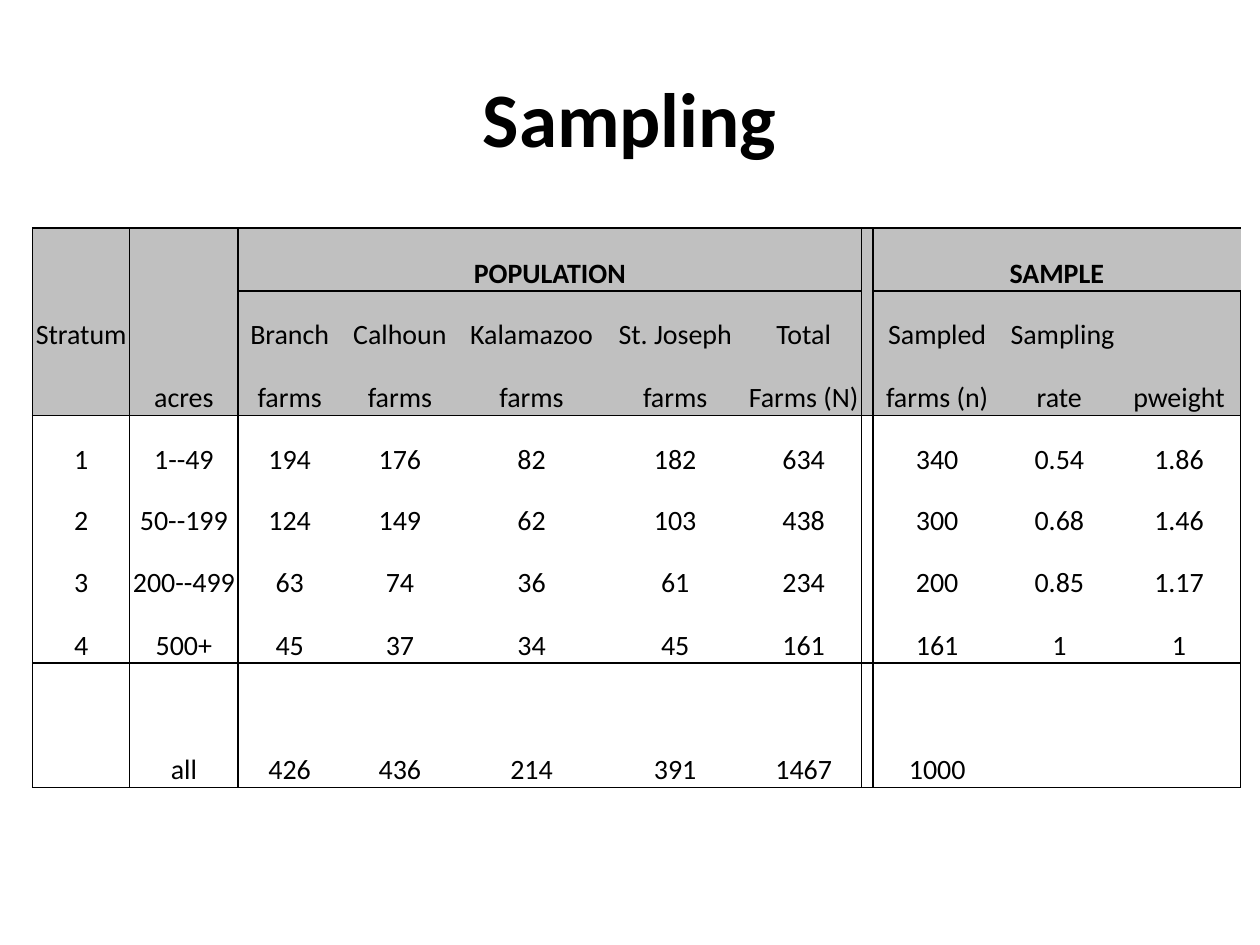
"""Build the farm sampling slide."""
from dataclasses import dataclass

import pptx
import pptx.dml.color
import pptx.enum.text
import pptx.oxml
import pptx.oxml.ns
import pptx.util

Inches = pptx.util.Inches
Pt = pptx.util.Pt
ANCHOR = pptx.enum.text.MSO_ANCHOR


@dataclass(frozen=True)
class Theme:
    """Colours, font and type sizes of the slide."""
    ink: str = "000000"
    header: str = "C0C0C0"
    body: str = "FFFFFF"
    font: str = "Calibri"
    title_size: int = 44
    table_size: int = 16
    rule_width: int = 1


THEME = Theme()

COLUMN_WIDTHS = [0.77, 0.86, 0.82, 0.93, 1.16, 1.12, 0.92, 0.09, 1.02, 0.92, 0.98]
ROW_HEIGHTS = [0.5, 0.49, 0.5, 0.49, 0.49, 0.49, 0.5, 0.49, 0.5]
HEADER_ROWS = 3
BANNERS = {2: 5, 8: 3}
COLUMN_RULES = {0, 1, 2, 7, 8, 11}
ROW_RULES = {0, 3, 7, 9}
FARMS = [
    ["", "", "POPULATION", "", "", "", "", "", "SAMPLE", "", ""],
    ["Stratum", "", "Branch", "Calhoun", "Kalamazoo", "St. Joseph", "Total", "",
     "Sampled", " Sampling", ""],
    ["", "acres", "farms", "farms", "farms", "farms", "Farms (N)", "",
     "farms (n)", "rate", "pweight"],
    ["1", "1--49", "194", "176", "82", "182", "634", "", "340", "0.54", "1.86"],
    ["2", "50--199", "124", "149", "62", "103", "438", "", "300", "0.68", "1.46"],
    ["3", "200--499", "63", "74", "36", "61", "234", "", "200", "0.85", "1.17"],
    ["4", "500+", "45", "37", "34", "45", "161", "", "161", "1", "1"],
    [""] * 11,
    ["", "all", "426", "436", "214", "391", "1467", "", "1000", "", ""],
]


def colour(value):
    """Turn a hex value into a colour."""
    return pptx.dml.color.RGBColor.from_string(value)


def write(paragraph, text, size, bold):
    """Add one centred run to a paragraph."""
    paragraph.alignment = pptx.enum.text.PP_ALIGN.CENTER
    run = paragraph.add_run()
    run.text = text
    run.font.name = THEME.font
    run.font.size = Pt(size)
    run.font.bold = bold
    run.font.color.rgb = colour(THEME.ink)


def set_borders(cell, ruled_sides):
    """Rule the given sides of a cell and clear the others."""
    properties = cell._tc.get_or_add_tcPr()
    for position, side in enumerate("LRTB"):
        paint = "<a:noFill/>"
        if side in ruled_sides:
            paint = f'<a:solidFill><a:srgbClr val="{THEME.ink}"/></a:solidFill>'
        properties.insert(position, pptx.oxml.parse_xml(
            f'<a:ln{side} {pptx.oxml.ns.nsdecls("a")} w="{Pt(THEME.rule_width)}">'
            f"{paint}</a:ln{side}>"))


def is_ruled_row(edge, column):
    """Tell whether a row edge carries a rule in the given column."""
    under_banner = any(start <= column < start + span for start, span in BANNERS.items())
    return edge in ROW_RULES or (edge == 1 and under_banner)


def ruled_sides(row, column):
    """Collect the sides of a cell that carry a rule."""
    edges = {
        "L": column in COLUMN_RULES,
        "R": column + 1 in COLUMN_RULES,
        "T": is_ruled_row(row, column),
        "B": is_ruled_row(row + 1, column),
    }
    return {side for side, ruled in edges.items() if ruled}


def fill_cell(cell, row, column):
    """Set the text, fill and rules of one cell."""
    cell.margin_left = cell.margin_right = cell.margin_top = Inches(0.01)
    cell.margin_bottom = 0
    cell.vertical_anchor = ANCHOR.BOTTOM
    cell.fill.solid()
    cell.fill.fore_color.rgb = colour(THEME.header if row < HEADER_ROWS else THEME.body)
    set_borders(cell, ruled_sides(row, column))
    if FARMS[row][column]:
        write(cell.text_frame.paragraphs[0], FARMS[row][column],
              THEME.table_size, bold=row == 0)


def add_title(slide, left, top, width, height):
    """Place the slide title in its box."""
    frame = slide.shapes.add_textbox(left, top, width, height).text_frame
    frame.word_wrap = True
    frame.vertical_anchor = ANCHOR.MIDDLE
    write(frame.paragraphs[0], "Sampling", THEME.title_size, bold=True)


def add_farm_table(slide, left, top, width, height):
    """Place the population and sample table in its box."""
    table = slide.shapes.add_table(
        len(ROW_HEIGHTS), len(COLUMN_WIDTHS), left, top, width, height).table
    table.first_row = table.horz_banding = False
    for column, share in zip(table.columns, COLUMN_WIDTHS):
        column.width = int(width * share / sum(COLUMN_WIDTHS))
    for row, share in zip(table.rows, ROW_HEIGHTS):
        row.height = int(height * share / sum(ROW_HEIGHTS))
    for row in range(len(ROW_HEIGHTS)):
        for column in range(len(COLUMN_WIDTHS)):
            fill_cell(table.cell(row, column), row, column)
    for start, span in BANNERS.items():
        table.cell(0, start).merge(table.cell(0, start + span - 1))


def main():
    """Build and save the presentation."""
    deck = pptx.Presentation()
    deck.slide_width, deck.slide_height = Inches(10), Inches(7.5)
    slide = deck.slides.add_slide(deck.slide_layouts[6])
    add_title(slide, Inches(0.5), Inches(0.3), Inches(9), Inches(1.25))
    add_farm_table(slide, Inches(0.26), Inches(1.81), Inches(9.59), Inches(4.44))
    deck.save("out.pptx")


if __name__ == "__main__":
    main()
